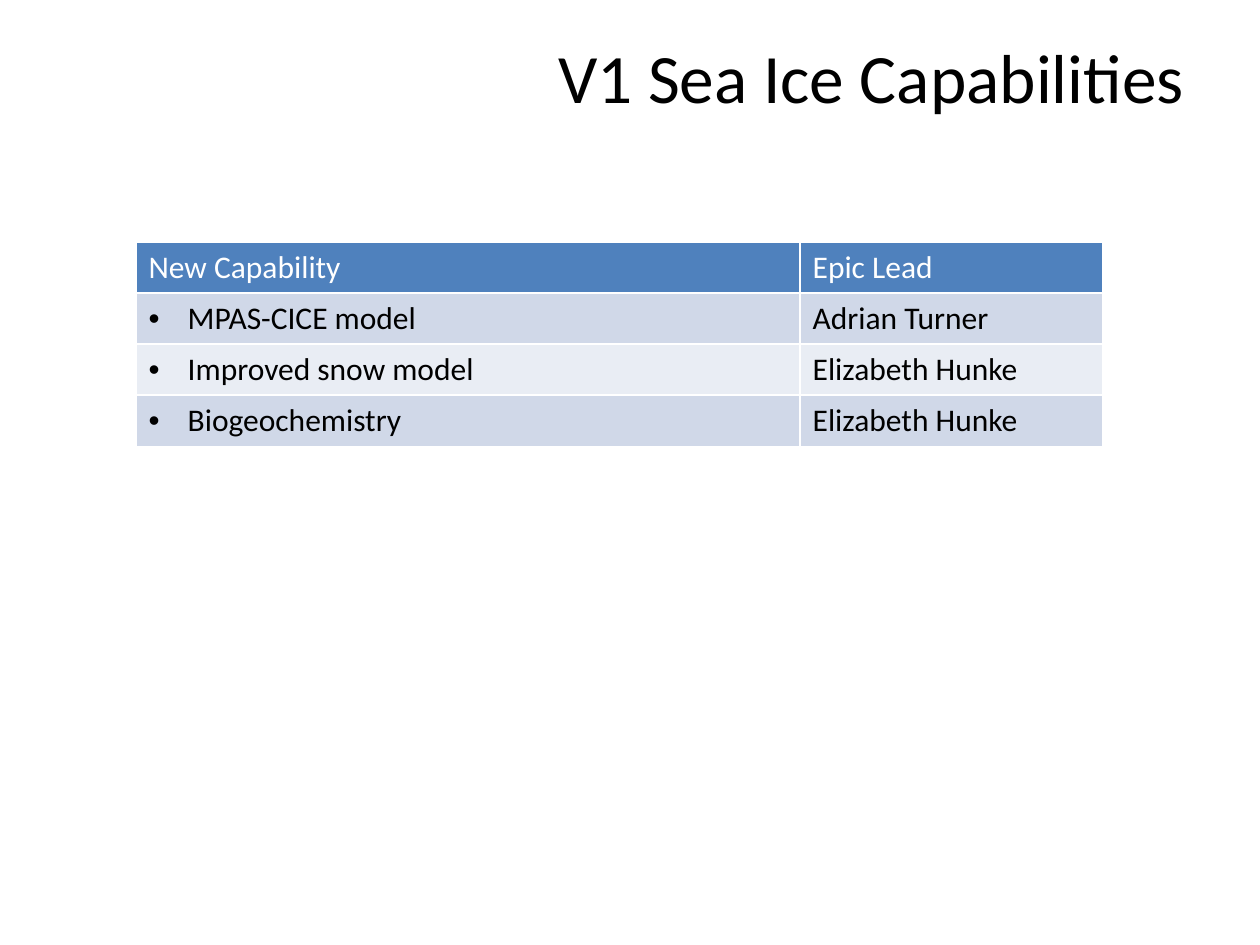
from lxml import etree
from pptx import Presentation
from pptx.dml.color import RGBColor
from pptx.enum.text import MSO_ANCHOR, MSO_AUTO_SIZE, PP_ALIGN
from pptx.oxml.ns import qn
from pptx.util import Inches, Pt

RIGHT, MIDDLE, NO_FIT = PP_ALIGN.RIGHT, MSO_ANCHOR.MIDDLE, MSO_AUTO_SIZE.NONE
BLACK = RGBColor(0x00, 0x00, 0x00)
WHITE = RGBColor(0xFF, 0xFF, 0xFF)
HEADER_BLUE = RGBColor(0x4F, 0x81, 0xBD)
BANDS = (RGBColor(0xE9, 0xED, 0xF4), RGBColor(0xD0, 0xD8, 0xE8))

COL_WIDTHS = (5.27, 2.4)
ROW_HEIGHT = 0.4
BULLET_INDENT = Inches(0.31)
ROWS = (
    ("New Capability", "Epic Lead"),
    ("MPAS-CICE model", "Adrian Turner"),
    ("Improved snow model", "Elizabeth Hunke"),
    ("Biogeochemistry", "Elizabeth Hunke"),
)


def format_font(font, size, color):
    for name, value in {"name": "Calibri", "size": Pt(size), "bold": False}.items():
        setattr(font, name, value)
    font.color.rgb = color


def add_bullet(p):
    pPr = p._p.get_or_add_pPr()
    pPr.set("marL", str(BULLET_INDENT))
    pPr.set("indent", str(-BULLET_INDENT))
    etree.SubElement(pPr, qn("a:buFont"), typeface="Arial")
    etree.SubElement(pPr, qn("a:buChar"), char="•")


def set_title(s, text):
    title = s.shapes.title
    box = {"left": 0.5, "top": 0.3, "width": 9, "height": 0.6}
    for name, value in box.items():
        setattr(title, name, Inches(value))
    tf = title.text_frame
    tf.text = text
    tf.auto_size, tf.vertical_anchor = NO_FIT, MIDDLE
    p = tf.paragraphs[0]
    p.alignment = RIGHT
    format_font(p.runs[0].font, 39.6, BLACK)


def fill_cell(cell, text, fill, color, bullet):
    cell.fill.solid()
    cell.fill.fore_color.rgb = fill
    cell.text = text
    p = cell.text_frame.paragraphs[0]
    if bullet:
        add_bullet(p)
    format_font(p.runs[0].font, 18, color)


def add_capability_table(s, left, top):
    frame = s.shapes.add_table(
        len(ROWS), len(COL_WIDTHS), Inches(left), Inches(top),
        Inches(sum(COL_WIDTHS)), Inches(ROW_HEIGHT * len(ROWS)))
    table = frame.table
    for column, width in zip(table.columns, COL_WIDTHS):
        column.width = Inches(width)
    for i, row in enumerate(ROWS):
        header = i == 0
        fill = HEADER_BLUE if header else BANDS[i % 2]
        color = WHITE if header else BLACK
        for j, text in enumerate(row):
            fill_cell(table.cell(i, j), text, fill, color, not header and j == 0)


def main():
    prs = Presentation()
    prs.slide_width, prs.slide_height = Inches(10), Inches(7.5)
    s = prs.slides.add_slide(prs.slide_layouts[5])  # title only
    set_title(s, "V1 Sea Ice Capabilities")
    add_capability_table(s, 1.08, 1.92)
    prs.save("out.pptx")


if __name__ == "__main__":
    main()
